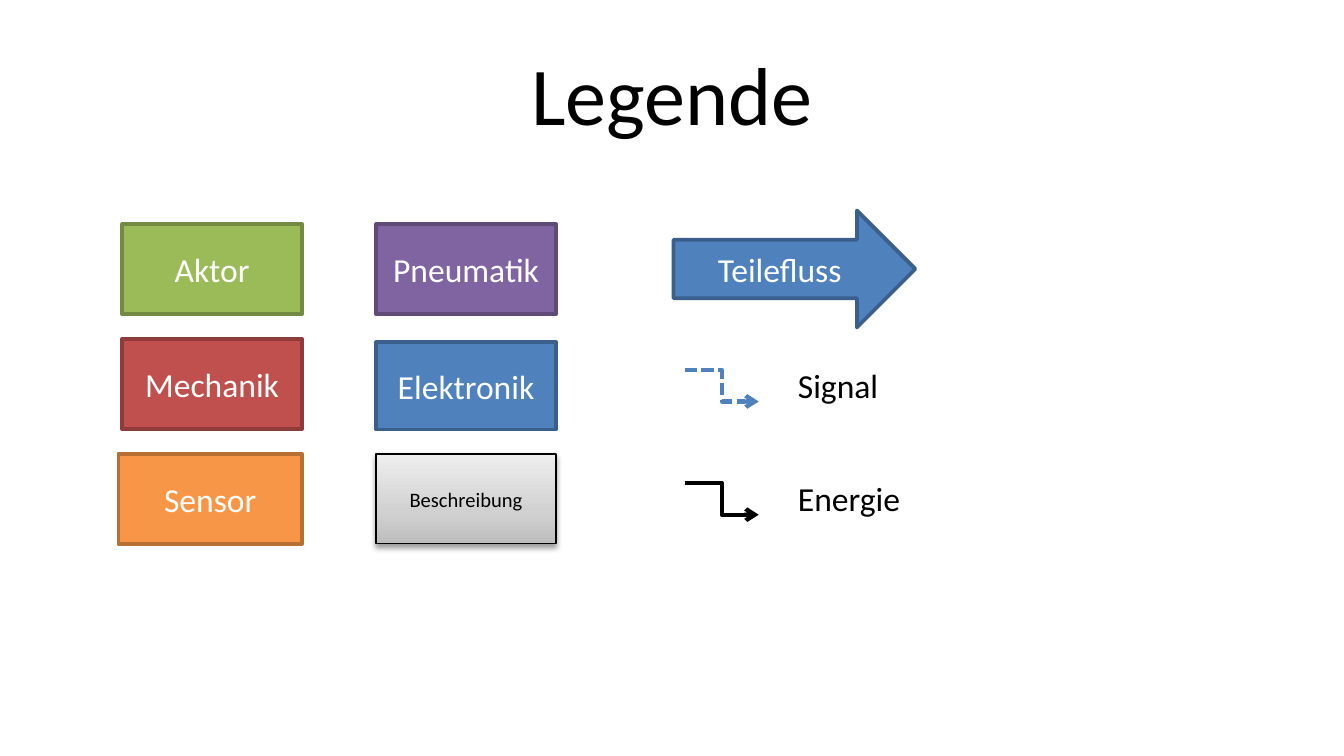
from lxml import etree
from pptx import Presentation
from pptx.dml.color import RGBColor
from pptx.enum.dml import MSO_LINE
from pptx.enum.shapes import MSO_CONNECTOR, MSO_SHAPE
from pptx.enum.text import MSO_ANCHOR, MSO_AUTO_SIZE, PP_ALIGN
from pptx.oxml import parse_xml
from pptx.oxml.ns import nsdecls, qn
from pptx.util import Cm, Pt

RECTANGLE = MSO_SHAPE.RECTANGLE
RIGHT_ARROW = MSO_SHAPE.RIGHT_ARROW
ELBOW = MSO_CONNECTOR.ELBOW
DASHED = MSO_LINE.SQUARE_DOT
SOLID = MSO_LINE.SOLID
MIDDLE = MSO_ANCHOR.MIDDLE
TOP = MSO_ANCHOR.TOP
CENTER = PP_ALIGN.CENTER
LEFT = PP_ALIGN.LEFT
FIT_SHAPE = MSO_AUTO_SIZE.SHAPE_TO_FIT_TEXT

FONT = "Calibri"
BLACK, WHITE, BLUE, DARK_BLUE = "000000", "FFFFFF", "4F81BD", "3A5F8C"

TITLE = "Legende"
CATEGORIES = [
    ("Aktor", (2.31, 4.24, 3.4, 1.7), "9BBB59", "738A42"),
    ("Mechanik", (2.31, 6.41, 3.4, 1.7), "C0504D", "8E3B39"),
    ("Sensor", (2.24, 8.58, 3.47, 1.7), "F79646", "B76F34"),
    ("Pneumatik", (7.11, 4.24, 3.4, 1.7), "8064A2", "5F4A78"),
    ("Elektronik", (7.11, 6.47, 3.4, 1.65), BLUE, DARK_BLUE),
]
DESCRIPTION = ("Beschreibung", (7.11, 8.58, 3.4, 1.7))
DESCRIPTION_STOPS = [(0, "BDBDBD"), (35, "D1D1D1"), (100, "EEEEEE")]
PART_FLOW = ("Teilefluss", (12.73, 3.98, 4.57, 2.21))
FLOWS = [
    ("Signal", 6.99, 2.06, BLUE, DASHED),
    ("Energie", 9.13, 2.46, BLACK, SOLID),
]
FLOW_LEFT, FLOW_WIDTH, FLOW_HEIGHT = 12.94, 1.4, 0.6
LABEL_LEFT, LABEL_RISE, LABEL_HEIGHT = 14.83, 0.22, 1.03


def color(value):
    return RGBColor.from_string(value)


def lengths(box):
    return [Cm(value) for value in box]


def write(shape, text, size, ink, alignment=CENTER, anchor=MIDDLE, wrap=True):
    frame = shape.text_frame
    frame.word_wrap = wrap
    frame.vertical_anchor = anchor
    paragraph = frame.paragraphs[0]
    paragraph.alignment = alignment
    run = paragraph.add_run()
    run.text = text
    run.font.name = FONT
    run.font.size = Pt(size)
    run.font.color.rgb = color(ink)


def add_box(slide, kind, text, box, fill, border, border_width=2, size=18, ink=WHITE):
    shape = slide.shapes.add_shape(kind, *lengths(box))
    shape.shadow.inherit = False
    shape.fill.solid()
    shape.fill.fore_color.rgb = color(fill)
    shape.line.color.rgb = color(border)
    shape.line.width = Pt(border_width)
    write(shape, text, size, ink)
    return shape


def add_gradient_and_shadow(shape, stops):
    properties = shape._element.spPr
    stop_list = "".join(
        f'<a:gs pos="{position * 1000}"><a:srgbClr val="{value}"/></a:gs>'
        for position, value in stops
    )
    gradient = parse_xml(
        f'<a:gradFill {nsdecls("a")} rotWithShape="1"><a:gsLst>{stop_list}</a:gsLst>'
        '<a:lin ang="16200000" scaled="0"/></a:gradFill>'
    )
    properties.replace(properties.find(qn("a:solidFill")), gradient)
    shadow = parse_xml(
        f'<a:outerShdw {nsdecls("a")} blurRad="{Pt(3.1)}" dist="{Pt(1.6)}" '
        'dir="5400000" rotWithShape="0"><a:srgbClr val="000000">'
        '<a:alpha val="38000"/></a:srgbClr></a:outerShdw>'
    )
    properties.find(qn("a:effectLst")).append(shadow)


def add_flow(slide, text, top, label_width, ink, dash):
    connector = slide.shapes.add_connector(
        ELBOW, *lengths((FLOW_LEFT, top, FLOW_LEFT + FLOW_WIDTH, top + FLOW_HEIGHT))
    )
    connector.line.color.rgb = color(ink)
    connector.line.width = Pt(2.25)
    connector.line.dash_style = dash
    properties = connector._element.spPr
    etree.SubElement(properties.find(qn("a:ln")), qn("a:tailEnd"), type="arrow")
    etree.SubElement(properties, qn("a:effectLst"))
    label = slide.shapes.add_textbox(
        *lengths((LABEL_LEFT, top - LABEL_RISE, label_width, LABEL_HEIGHT))
    )
    write(label, text, 18, BLACK, LEFT, TOP, wrap=False)
    label.text_frame.auto_size = FIT_SHAPE


def main():
    presentation = Presentation()
    presentation.slide_width = Cm(25.4)
    presentation.slide_height = Cm(14.29)
    slide = presentation.slides.add_slide(presentation.slide_layouts[6])

    title = slide.shapes.add_textbox(*lengths((1.27, 0.57, 22.86, 2.38)))
    write(title, TITLE, 44, BLACK)
    for text, box, fill, border in CATEGORIES:
        add_box(slide, RECTANGLE, text, box, fill, border)
    description = add_box(
        slide, RECTANGLE, *DESCRIPTION, WHITE, BLACK, border_width=0.75, size=11, ink=BLACK
    )
    add_gradient_and_shadow(description, DESCRIPTION_STOPS)
    add_box(slide, RIGHT_ARROW, *PART_FLOW, BLUE, DARK_BLUE)
    for flow in FLOWS:
        add_flow(slide, *flow)

    presentation.save("out.pptx")


if __name__ == "__main__":
    main()
